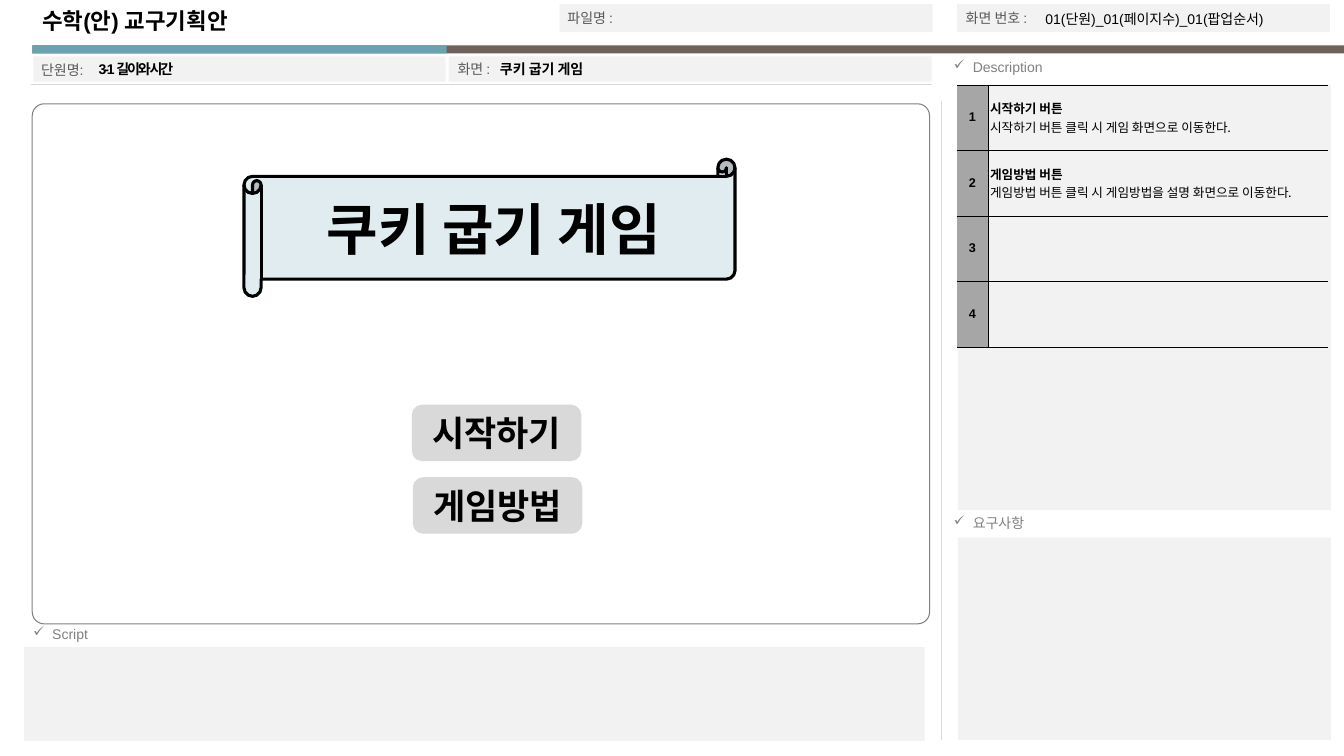
from dataclasses import dataclass, field

import lxml.etree
import pptx
import pptx.dml.color
import pptx.enum.shapes
import pptx.enum.text
import pptx.oxml.ns
import pptx.util

Inches = pptx.util.Inches
Pt = pptx.util.Pt
Shape = pptx.enum.shapes.MSO_SHAPE
Anchor = pptx.enum.text.MSO_ANCHOR
Align = pptx.enum.text.PP_ALIGN
qn = pptx.oxml.ns.qn

KOREAN = "Noto Sans CJK KR"
PANEL, RULE, GRAY, BLACK = "F2F2F2", "D9D9D9", "808080", "000000"
Bounds = tuple[float, float, float, float]


@dataclass
class Block:
    kind: Shape
    bounds: Bounds
    fill: str
    line: str | None = None
    weight: float = 0.75
    text: str = ""
    size: float = 10
    corner: float | None = None


@dataclass
class Label:
    text: str
    bounds: Bounds
    color: str = BLACK
    size: float = 10
    bold: bool = False
    font: str = "Arial"
    spacing: int = 0
    check: bool = False
    anchor: Anchor = Anchor.MIDDLE


@dataclass
class Rule:
    start: tuple[float, float]
    end: tuple[float, float]


@dataclass
class Description:
    number: int
    lines: list[str] = field(default_factory=list)


def color(value: str) -> pptx.dml.color.RGBColor:
    return pptx.dml.color.RGBColor.from_string(value)


def inches(values: tuple) -> list:
    return [Inches(value) for value in values]


def apply(target, values: dict) -> None:
    for name, value in values.items():
        setattr(target, name, value)


def write(para, text: str, font: str, size: float, tint: str = BLACK, bold: bool = False):
    """Add a span to the paragraph, with the Korean face for its Hangul."""
    span = para.add_run()
    span.text = text
    span.font.color.rgb = color(tint)
    apply(span.font, {"name": font, "size": Pt(size), "bold": bold})
    properties = span._r.get_or_add_rPr()
    lxml.etree.SubElement(properties, qn("a:ea"), typeface=KOREAN)
    return properties


def draw_block(page, block: Block) -> None:
    shape = page.shapes.add_shape(block.kind, *inches(block.bounds))
    shape.shadow.inherit = False
    shape.fill.solid()
    shape.fill.fore_color.rgb = color(block.fill)
    if block.corner is not None:
        shape.adjustments[0] = block.corner
    if block.line:
        shape.line.color.rgb = color(block.line)
        shape.line.width = Pt(block.weight)
    else:
        shape.line.fill.background()
    if block.text:
        apply(shape.text_frame, {"word_wrap": True, "vertical_anchor": Anchor.MIDDLE})
        para = shape.text_frame.paragraphs[0]
        para.alignment = Align.CENTER
        write(para, block.text, KOREAN, block.size, bold=True)


def draw_label(page, label: Label) -> None:
    box = page.shapes.add_textbox(*inches(label.bounds))
    apply(box.text_frame, {"word_wrap": True, "vertical_anchor": label.anchor})
    para = box.text_frame.paragraphs[0]
    properties = write(para, label.text, label.font, label.size, label.color, label.bold)
    if label.spacing:
        properties.set("spc", str(label.spacing))
    if label.check:
        layout = para._p.get_or_add_pPr()
        indent = Inches(0.19)
        layout.set("marL", str(indent))
        layout.set("indent", str(-indent))
        lxml.etree.SubElement(layout, qn("a:buChar"), char="✓")


def draw_rule(page, rule: Rule) -> None:
    line = page.shapes.add_connector(
        pptx.enum.shapes.MSO_CONNECTOR.STRAIGHT, *inches(rule.start + rule.end))
    line.line.color.rgb = color(RULE)
    line.line.width = Pt(0.75)
    lxml.etree.SubElement(line._element.spPr, qn("a:effectLst"))


def set_borders(cell, sides: str) -> None:
    """Draw the named sides (L, R, T, B) in black and clear the others."""
    properties = cell._tc.get_or_add_tcPr()
    for position, side in enumerate("LRTB"):
        border = lxml.etree.Element(qn(f"a:ln{side}"), w=str(Pt(0.25)))
        if side in sides:
            solid = lxml.etree.SubElement(border, qn("a:solidFill"))
            lxml.etree.SubElement(solid, qn("a:srgbClr"), val=BLACK)
        else:
            lxml.etree.SubElement(border, qn("a:noFill"))
        properties.insert(position, border)


def draw_descriptions(page, rows: list[Description]) -> None:
    height = 0.65
    frame = page.shapes.add_table(
        len(rows), 2, *inches((9.49, 0.84, 3.68, height * len(rows))))
    table = frame.table
    apply(table, {"first_row": False, "horz_banding": False})
    for column, width in zip(table.columns, (0.31, 3.37)):
        column.width = Inches(width)
    margins = {f"margin_{side}": Inches(0.02) for side in ("left", "right", "top", "bottom")}
    for index, row in enumerate(rows):
        table.rows[index].height = Inches(height)
        number, detail = table.cell(index, 0), table.cell(index, 1)
        for cell in (number, detail):
            apply(cell, margins | {"vertical_anchor": Anchor.MIDDLE})
        number.fill.solid()
        number.fill.fore_color.rgb = color("A6A6A6")
        detail.fill.background()
        set_borders(number, "RTB")
        set_borders(detail, "LTB")
        para = number.text_frame.paragraphs[0]
        para.alignment = Align.CENTER
        write(para, str(row.number), "Arial", 9, bold=True)
        for place, text in enumerate(row.lines):
            body = detail.text_frame
            para = body.add_paragraph() if place else body.paragraphs[0]
            write(para, text, KOREAN, 9, bold=place == 0)


HEADER_BARS = [
    Block(Shape.RECTANGLE, (0.32, 0.45, 13.01, 0.08), "6D6359"),
    Block(Shape.RECTANGLE, (0.32, 0.45, 4.11, 0.08), "6BA1B2"),
]
PANELS = [Block(Shape.RECTANGLE, bounds, PANEL) for bounds in (
    (9.5, 0.84, 3.7, 4.22), (9.5, 5.33, 3.7, 2.01), (0.24, 6.42, 8.93, 0.93),
    (0.33, 0.56, 4.09, 0.25), (4.45, 0.56, 4.79, 0.25),
    (5.55, 0.04, 3.7, 0.28), (9.49, 0.04, 3.7, 0.28))]
GAME_SCREEN = Block(Shape.ROUNDED_RECTANGLE, (0.32, 1.03, 8.9, 5.16), "FFFFFF", GRAY,
                    corner=0.023)
RULES = [Rule((9.34, 1), (9.34, 7.34)), Rule((0.31, 0.84), (9.24, 0.84))]
SECTIONS = [Label(text, bounds, GRAY, check=True, anchor=Anchor.TOP) for text, bounds in (
    ("Description", (9.36, 0.53, 3.97, 0.27)),
    ("요구사항", (9.36, 5.06, 3.97, 0.27)),
    ("Script", (0.23, 6.16, 3.94, 0.31)))]
CAPTIONS = [Label(text, (left, top, 3.66, 0.25), "595959") for text, left, top in (
    ("단원명:", 0.31, 0.57), ("화면 :", 4.44, 0.56),
    ("파일명 :", 5.53, 0.05), ("화면 번호 :", 9.48, 0.05))]
ENTRIES = [
    Label("3-1 길이와 시간", (0.88, 0.56, 3.89, 0.25), bold=True, spacing=-150),
    Label("수학(안) 교구기획안", (0.32, 0.02, 5.2, 0.37), size=16, bold=True,
          anchor=Anchor.TOP),
    Label("쿠키 굽기 게임", (4.86, 0.56, 4.38, 0.25), bold=True, font=KOREAN),
    Label("01(단원)_01(페이지수)_01(팝업순서)", (10.27, 0.06, 2.9, 0.25)),
]
DESCRIPTIONS = [
    Description(1, ["시작하기 버튼", "시작하기 버튼 클릭 시 게임 화면으로 이동한다."]),
    Description(2, ["게임방법 버튼", "게임방법 버튼 클릭 시 게임방법을 설명 화면으로 이동한다."]),
    Description(3),
    Description(4),
]
GAME_PARTS = [Block(Shape.HORIZONTAL_SCROLL, (2.42, 1.58, 4.87, 1.36), "E1ECF0", BLACK,
                    2.25, "쿠키 굽기 게임", 40)]
GAME_PARTS += [
    Block(Shape.ROUNDED_RECTANGLE, (left, top, 1.65, 0.53), RULE, RULE, 2.25, text, 25)
    for text, left, top in (("게임방법", 4.11, 4.75), ("시작하기", 4.1, 4.03))]


def main() -> None:
    deck = pptx.Presentation()
    apply(deck, {"slide_width": Inches(13.33), "slide_height": Inches(7.5)})
    page = deck.slides.add_slide(deck.slide_layouts[6])
    for block in HEADER_BARS + PANELS + [GAME_SCREEN]:
        draw_block(page, block)
    for rule in RULES:
        draw_rule(page, rule)
    for label in SECTIONS + CAPTIONS + ENTRIES:
        draw_label(page, label)
    draw_descriptions(page, DESCRIPTIONS)
    for block in GAME_PARTS:
        draw_block(page, block)
    deck.save("out.pptx")


if __name__ == "__main__":
    main()
